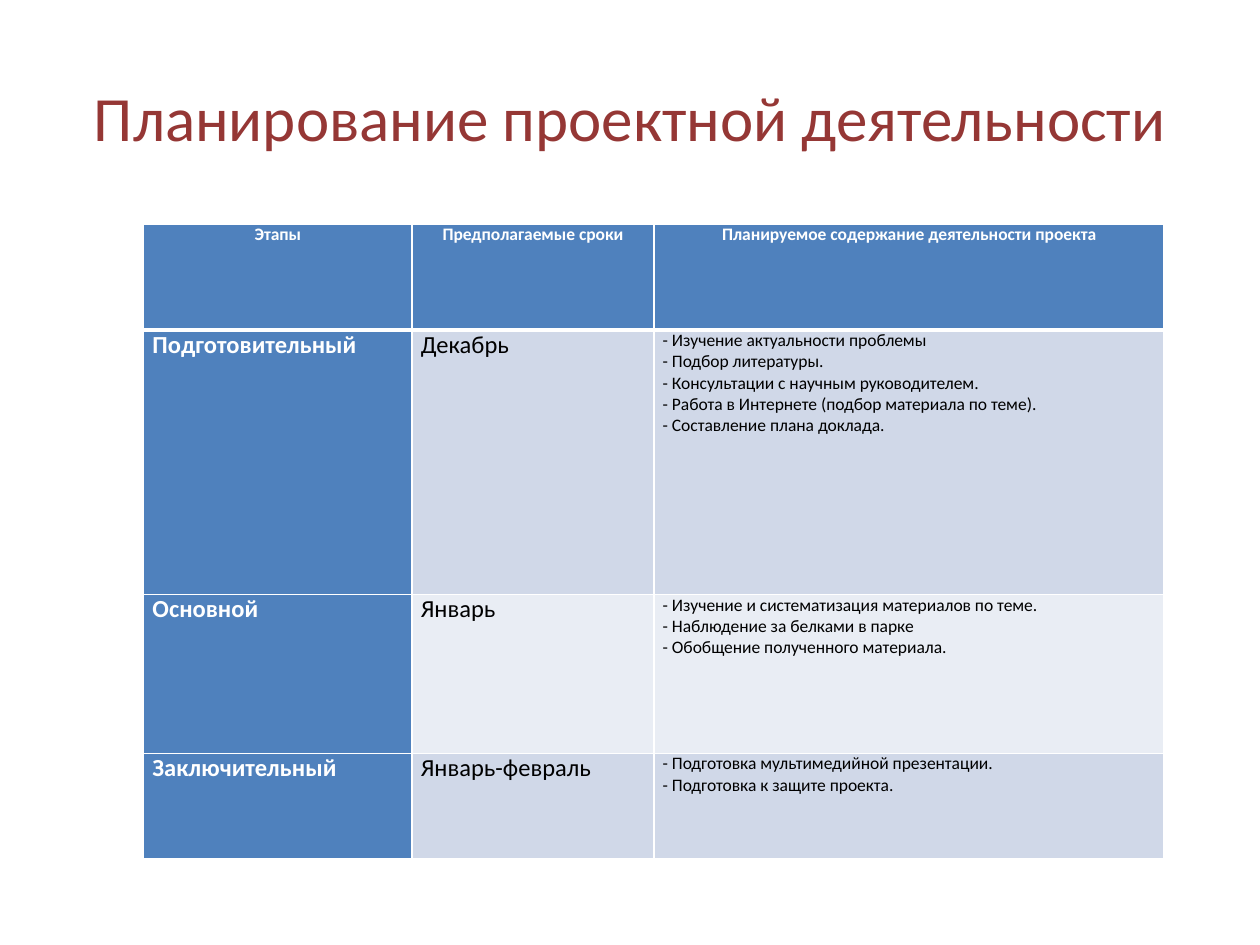
from lxml import etree
from pptx import Presentation
from pptx.dml.color import RGBColor
from pptx.enum import text
from pptx.oxml import ns
from pptx.util import Inches, Pt

COLORS = {
    "title": "953735",
    "blue": "4F81BD",
    "band_dark": "D0D8E8",
    "band_light": "E9EDF4",
    "white": "FFFFFF",
    "black": "000000",
}
ALIGN = text.PP_ALIGN


def add_text(p, words, size, color, bold, align):
    p.alignment = align
    r = p.add_run()
    r.text = words
    r.font.name = "Calibri"
    r.font.size = Pt(size)
    r.font.bold = bold
    r.font.color.rgb = RGBColor.from_string(COLORS[color])


def fill_cell(cell, color, top, bottom):
    """Set the white borders, of the given top and bottom widths, and the fill."""
    tc_pr = cell._tc.get_or_add_tcPr()
    for tag, width in (("lnL", 1), ("lnR", 1), ("lnT", top), ("lnB", bottom)):
        ln = etree.SubElement(tc_pr, ns.qn(f"a:{tag}"), w=str(Pt(width)))
        solid = etree.SubElement(ln, ns.qn("a:solidFill"))
        etree.SubElement(solid, ns.qn("a:srgbClr"), val=COLORS["white"])
    cell.fill.solid()
    cell.fill.fore_color.rgb = RGBColor.from_string(COLORS[color])


prs = Presentation()
prs.slide_width, prs.slide_height = Inches(10), Inches(7.5)
s = prs.slides.add_slide(prs.slide_layouts[5])

title = s.shapes.title
title.left, title.top = Inches(0.5), Inches(0.3)
title.width, title.height = Inches(9), Inches(1.25)
tf = title.text_frame
tf.vertical_anchor = text.MSO_ANCHOR.MIDDLE
add_text(tf.paragraphs[0], "Планирование проектной деятельности",
         36, "title", False, ALIGN.CENTER)

rows = [
    ("Этапы", "Предполагаемые сроки", ["Планируемое содержание деятельности проекта"]),
    ("Подготовительный", "Декабрь", [
        "- Изучение актуальности проблемы",
        "- Подбор литературы.",
        "- Консультации с научным руководителем.",
        "- Работа в Интернете (подбор материала по теме).",
        "- Составление плана доклада.",
    ]),
    ("Основной", "Январь", [
        "- Изучение и систематизация материалов по теме.",
        "- Наблюдение за белками в парке",
        "- Обобщение полученного материала.",
    ]),
    ("Заключительный", "Январь-февраль", [
        "- Подготовка мультимедийной презентации.",
        "- Подготовка к защите проекта.",
    ]),
]
col_widths = [2.13, 1.92, 4.05]
row_heights = [0.84, 2.1, 1.26, 0.84]

table = s.shapes.add_table(len(rows), len(col_widths), Inches(1.14), Inches(1.78),
                           Inches(sum(col_widths)), Inches(sum(row_heights))).table
table.first_col = True
for column, width in zip(table.columns, col_widths):
    column.width = Inches(width)
for row, height in zip(table.rows, row_heights):
    row.height = Inches(height)

# Size, colour, bold and alignment of the text in each column
header_style = (10, "white", True, ALIGN.CENTER)
body_styles = [
    (14, "white", True, ALIGN.LEFT),
    (14, "black", False, ALIGN.LEFT),
    (10, "black", False, ALIGN.JUSTIFY),
]
for i, (stage, dates, content) in enumerate(rows):
    band = "band_dark" if i % 2 else "band_light"
    for j, lines in enumerate(([stage], [dates], content)):
        cell = table.cell(i, j)
        cell.margin_left = cell.margin_right = Inches(0.07)
        cell.margin_top = cell.margin_bottom = 0
        fill_cell(cell, "blue" if i == 0 or j == 0 else band,
                  top=3 if i == 1 else 1, bottom=3 if i == 0 else 1)
        tf = cell.text_frame
        for n, line in enumerate(lines):
            p = tf.add_paragraph() if n else tf.paragraphs[0]
            add_text(p, line, *(body_styles[j] if i else header_style))

prs.save("out.pptx")
